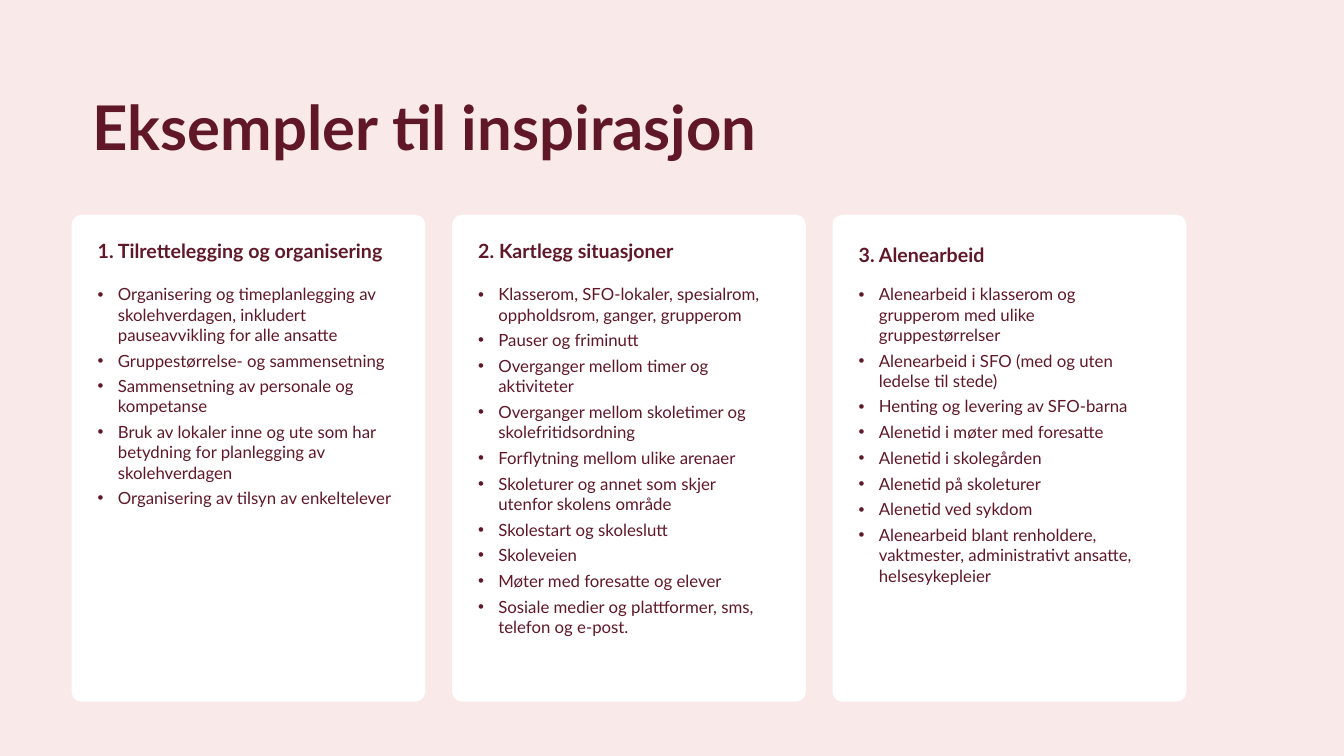
from dataclasses import dataclass

from lxml.etree import SubElement
from pptx import Presentation
from pptx.dml.color import RGBColor
from pptx.enum.shapes import MSO_SHAPE as Shape
from pptx.enum.text import MSO_ANCHOR as Anchor, MSO_AUTO_SIZE as AutoSize, PP_ALIGN as Align
from pptx.oxml.ns import qn
from pptx.util import Pt

WINE = "601828"
PINK = "F9E9E8"
WHITE = "FFFFFF"
FONT = "Lato"
CARD_LEFT, CARD_TOP, CARD_WIDTH, CARD_HEIGHT = 51.1, 153.4, 252.7, 347.8
CARD_PITCH = 271.8
TEXT_INSET = 18.7
LIST_TOP, LIST_HEIGHT = 199.4, 289.4
HEADING_HEIGHT = 24.5
BULLET_INDENT = 14.4


@dataclass
class Card:
    heading: str
    items: list[str]
    placeholder: int
    text_width: float = 214.6
    heading_top: float = 167


CARDS = [
    Card("1. Tilrettelegging og organisering", [
        "Organisering og timeplanlegging av skolehverdagen, inkludert pauseavvikling for alle ansatte",
        "Gruppestørrelse- og sammensetning",
        "Sammensetning av personale og kompetanse",
        "Bruk av lokaler inne og ute som har betydning for planlegging av skolehverdagen",
        "Organisering av tilsyn av enkeltelever",
    ], placeholder=1, text_width=223.2),
    Card("2. Kartlegg situasjoner", [
        "Klasserom, SFO-lokaler, spesialrom, oppholdsrom, ganger, grupperom",
        "Pauser og friminutt",
        "Overganger mellom timer og aktiviteter",
        "Overganger mellom skoletimer og skolefritidsordning",
        "Forflytning mellom ulike arenaer",
        "Skoleturer og annet som skjer utenfor skolens område",
        "Skolestart og skoleslutt",
        "Skoleveien",
        "Møter med foresatte og elever",
        "Sosiale medier og plattformer, sms, telefon og e-post.",
    ], placeholder=2),
    Card("3. Alenearbeid", [
        "Alenearbeid i klasserom og grupperom med ulike gruppestørrelser",
        "Alenearbeid i SFO (med og uten ledelse til stede)",
        "Henting og levering av SFO-barna",
        "Alenetid i møter med foresatte",
        "Alenetid i skolegården",
        "Alenetid på skoleturer",
        "Alenetid ved sykdom",
        "Alenearbeid blant renholdere, vaktmester, administrativt ansatte, helsesykepleier",
    ], placeholder=4, heading_top=169.9),
]


def rgb(value: str) -> RGBColor:
    return RGBColor.from_string(value)


def place(sp, left: float, top: float, width: float, height: float) -> None:
    sp.left, sp.top, sp.width, sp.height = Pt(left), Pt(top), Pt(width), Pt(height)


def add_bullet(p) -> None:
    pPr = p._p.get_or_add_pPr()
    pPr.set("marL", str(Pt(BULLET_INDENT)))
    pPr.set("indent", str(-Pt(BULLET_INDENT)))
    SubElement(pPr, qn("a:buFont")).set("typeface", "Arial")
    SubElement(pPr, qn("a:buChar")).set("char", "•")


def write(sp, *lines: str, size: float, bold: bool = False, anchor=Anchor.TOP,
          spacing: float = 1, before: float = 0, bullets: bool = False) -> None:
    tf = sp.text_frame
    tf.word_wrap = True
    tf.auto_size = AutoSize.NONE
    tf.vertical_anchor = anchor
    tf.margin_left, tf.margin_right = Pt(0), Pt(7.2)
    tf.margin_top = tf.margin_bottom = Pt(3.6)
    for i, line in enumerate(lines):
        p = tf.paragraphs[0] if i == 0 else tf.add_paragraph()
        p.alignment = Align.LEFT
        p.line_spacing = spacing
        p.space_before = Pt(before)
        p.space_after = Pt(0)
        if bullets:
            add_bullet(p)
        r = p.add_run()
        r.text = line
        r.font.name, r.font.size, r.font.bold = FONT, Pt(size), bold
        r.font.color.rgb = rgb(WINE)


def draw_card(s, card: Card, left: float) -> None:
    panel = s.shapes.add_shape(Shape.ROUNDED_RECTANGLE, Pt(left), Pt(CARD_TOP),
                               Pt(CARD_WIDTH), Pt(CARD_HEIGHT))
    panel.adjustments[0] = 0.028
    panel.shadow.inherit = False
    panel.fill.solid()
    panel.fill.fore_color.rgb = rgb(WHITE)
    panel.line.fill.background()
    s.shapes._spTree.insert(2, panel._element)

    text_left = left + TEXT_INSET
    heading = s.shapes.add_textbox(Pt(text_left), Pt(card.heading_top),
                                   Pt(card.text_width), Pt(HEADING_HEIGHT))
    write(heading, card.heading, size=14, bold=True)

    body = s.placeholders[card.placeholder]
    place(body, text_left, LIST_TOP, card.text_width, LIST_HEIGHT)
    write(body, *card.items, size=12, before=4, bullets=True)


def main() -> None:
    prs = Presentation()
    prs.slide_width, prs.slide_height = Pt(960), Pt(540)
    s = prs.slides.add_slide(prs.slide_layouts.get_by_name("Comparison"))
    s.background.fill.solid()
    s.background.fill.fore_color.rgb = rgb(PINK)

    title = s.shapes.title
    place(title, 66.2, 38.9, 828, 81.4)
    write(title, "Eksempler til inspirasjon", size=44, bold=True,
          anchor=Anchor.BOTTOM, spacing=0.9)

    for i, card in enumerate(CARDS):
        draw_card(s, card, CARD_LEFT + i * CARD_PITCH)

    for sp in list(s.placeholders):
        if not sp.text_frame.text:
            sp._element.getparent().remove(sp._element)
    prs.save("out.pptx")


if __name__ == "__main__":
    main()
